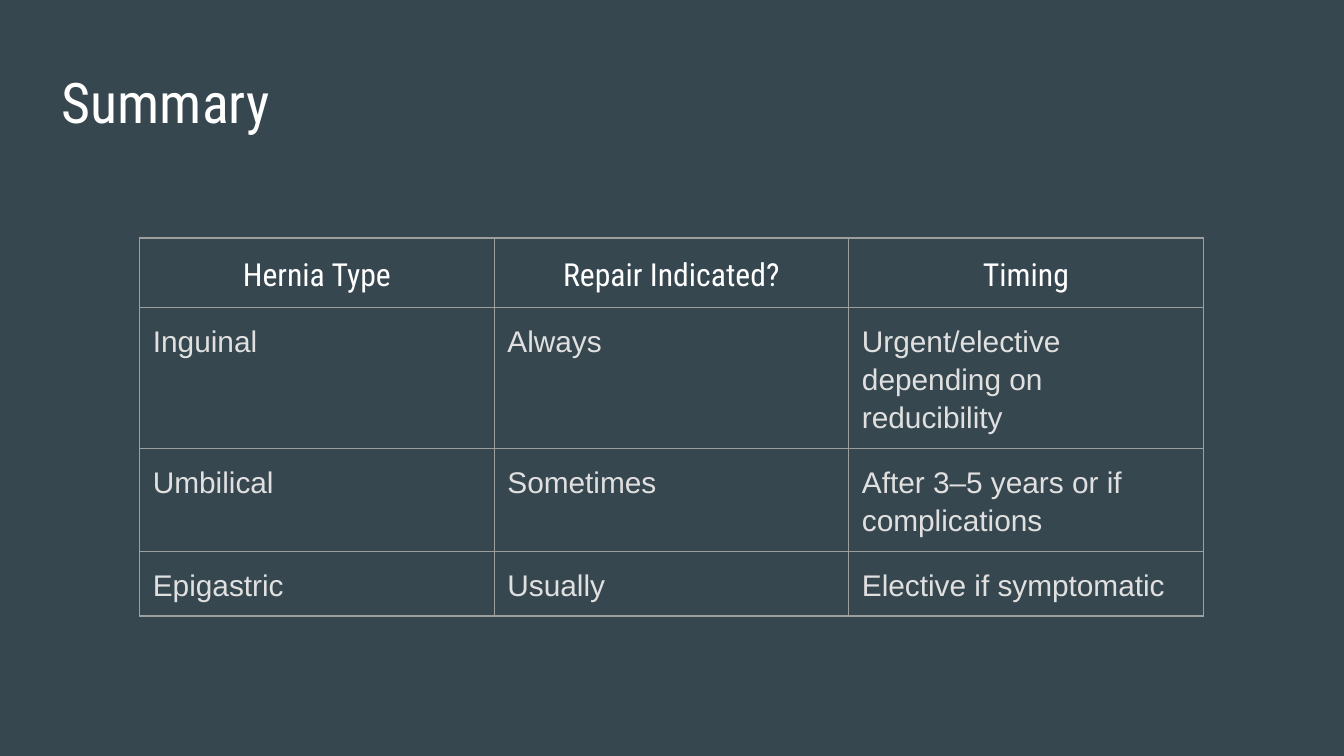
from lxml.etree import SubElement as Sub
from pptx import Presentation
from pptx.dml.color import RGBColor
from pptx.enum.text import MSO_AUTO_SIZE as Auto, PP_ALIGN as Align
from pptx.oxml.ns import qn
from pptx.util import Cm, Pt

# Content
TITLE = "Summary"
ROWS = [
    ("Hernia Type", "Repair Indicated?", "Timing"),
    ("Inguinal", "Always", "Urgent/elective depending on reducibility"),
    ("Umbilical", "Sometimes", "After 3–5 years or if complications"),
    ("Epigastric", "Usually", "Elective if symptomatic"),
]

# Style
SLATE = RGBColor(0x37, 0x47, 0x4F)
WHITE = RGBColor(0xFF, 0xFF, 0xFF)
PALE = RGBColor(0xE0, 0xE0, 0xE0)
GREY = RGBColor(0x9E, 0x9E, 0x9E)
HEAD, BODY = "Roboto Condensed", "Arial"
PAD = Cm(0.25)
COL, ROW = Cm(6.7), Cm(1.07)


def style(para, face, size, color, align=Align.LEFT):
    para.alignment = align
    para.line_spacing = 1.15
    font = para.font
    font.name, font.size, font.color.rgb = face, Pt(size), color


def pad(box):
    box.margin_left = box.margin_right = PAD
    box.margin_top = box.margin_bottom = PAD


def border(cell):
    props = cell._tc.get_or_add_tcPr()
    for i, side in enumerate(("lnL", "lnR", "lnT", "lnB")):
        line = Sub(props, qn("a:" + side), w=str(Pt(0.75)))
        fill = Sub(line, qn("a:solidFill"))
        Sub(fill, qn("a:srgbClr"), val=str(GREY))
        props.insert(i, line)


# Slide
deck = Presentation()
deck.slide_width, deck.slide_height = Cm(25.4), Cm(14.29)
slide = deck.slides.add_slide(deck.slide_layouts[6])
slide.background.fill.solid()
slide.background.fill.fore_color.rgb = SLATE

# Table
table = slide.shapes.add_table(
    len(ROWS), len(ROWS[0]), Cm(2.64), Cm(4.5),
    COL * len(ROWS[0]), ROW * len(ROWS)).table
table.first_row = table.horz_banding = False
for col in table.columns:
    col.width = COL
for r, row in enumerate(ROWS):
    table.rows[r].height = ROW
    for c, text in enumerate(row):
        cell = table.cell(r, c)
        cell.text = text
        cell.fill.background()
        pad(cell)
        border(cell)
        para = cell.text_frame.paragraphs[0]
        if r == 0:
            style(para, HEAD, 17, WHITE, Align.CENTER)
        else:
            style(para, BODY, 16, PALE)

# Title
frame = slide.shapes.add_textbox(Cm(0.92), Cm(0.84), Cm(8.33), Cm(1.8)).text_frame
frame.word_wrap = True
frame.auto_size = Auto.SHAPE_TO_FIT_TEXT
pad(frame)
para = frame.paragraphs[0]
para.text = TITLE
para.space_before, para.space_after = Pt(18), Pt(4)
style(para, HEAD, 30, WHITE)

deck.save("out.pptx")
